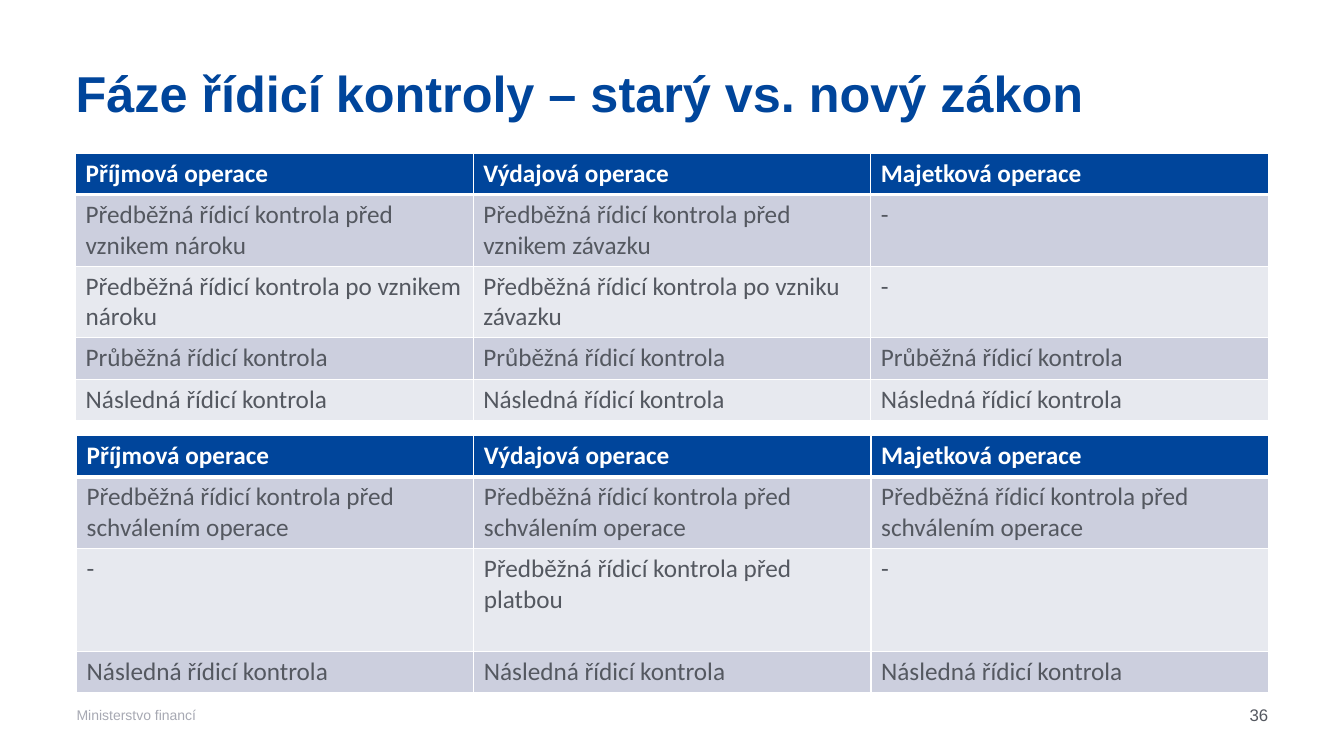
from lxml.etree import SubElement
from pptx import Presentation
from pptx.dml.color import RGBColor
from pptx.enum.text import MSO_ANCHOR as ANCHOR, MSO_AUTO_SIZE as AUTO_SIZE, PP_ALIGN as ALIGN
from pptx.oxml.ns import qn
from pptx.util import Inches, Pt

BLUE, GREY, PALE_GREY, WHITE = "00459B", "545860", "A7A9B3", "FFFFFF"
BANDS = ("CCCFDE", "E7E9EF")
LEFT, WIDTH = 0.75, 11.83
ONE_LINE, TWO_LINES, THREE_LINES = 0.41, 0.71, 1.02

HEADINGS = ["Příjmová operace", "Výdajová operace", "Majetková operace"]
PRIOR = "Předběžná řídicí kontrola "
ONGOING = ["Průběžná řídicí kontrola"] * 3
FOLLOW_UP = ["Následná řídicí kontrola"] * 3
OLD_LAW = [
    (ONE_LINE, HEADINGS),
    (TWO_LINES, [PRIOR + "před vznikem nároku", PRIOR + "před vznikem závazku", "-"]),
    (TWO_LINES, [PRIOR + "po vznikem nároku", PRIOR + "po vzniku závazku", "-"]),
    (ONE_LINE, ONGOING),
    (ONE_LINE, FOLLOW_UP),
]
NEW_LAW = [
    (ONE_LINE, HEADINGS),
    (TWO_LINES, [PRIOR + "před schválením operace"] * 3),
    (THREE_LINES, ["-", PRIOR + "před platbou", "-"]),
    (ONE_LINE, FOLLOW_UP),
]


def rgb(color):
    return RGBColor.from_string(color)


def set_font(font, color, **formats):
    font.color.rgb = rgb(color)
    for name, value in formats.items():
        setattr(font, name, value)


def fill_text(sp, box, text, color, size, bold=False, anchor=ANCHOR.MIDDLE,
              align=ALIGN.LEFT, spacing=1.0):
    """Place a text shape in its box, without insets, and write one line in it."""
    sp.left, sp.top, sp.width, sp.height = map(Inches, box)
    tf = sp.text_frame
    frame = dict(word_wrap=True, auto_size=AUTO_SIZE.NONE, vertical_anchor=anchor,
                 margin_left=0, margin_right=0, margin_top=0, margin_bottom=0)
    for name, value in frame.items():
        setattr(tf, name, value)
    p = tf.paragraphs[0]
    p.alignment, p.line_spacing = align, spacing
    r = p.add_run()
    r.text = text
    set_font(r.font, color, name="Arial", size=Pt(size), bold=bold)


def set_borders(cell, top, bottom):
    """Draw white cell borders; top and bottom widths are in points."""
    tc_pr = cell._tc.get_or_add_tcPr()
    for side, width in dict(lnL=1, lnR=1, lnT=top, lnB=bottom).items():
        line = SubElement(tc_pr, qn(f"a:{side}"), w=str(Pt(width)))
        fill = SubElement(line, qn("a:solidFill"))
        SubElement(fill, qn("a:srgbClr"), val=WHITE)


def add_phases(slide, left, top, width, rows):
    """Add a table of control phases, its rows given as (height, texts)."""
    columns = len(HEADINGS)
    height = sum(row_height for row_height, _ in rows)
    table = slide.shapes.add_table(len(rows), columns, *map(Inches, (left, top, width, height))).table
    for column in table.columns:
        column.width = Inches(width / columns)
    for i, (row_height, texts) in enumerate(rows):
        table.rows[i].height = Inches(row_height)
        header = i == 0
        for cell, text in zip(table.rows[i].cells, texts):
            set_borders(cell, top=3 if i == 1 else 1, bottom=3 if header else 1)
            cell.fill.solid()
            cell.fill.fore_color.rgb = rgb(BLUE if header else BANDS[(i - 1) % 2])
            r = cell.text_frame.paragraphs[0].add_run()
            r.text = text
            set_font(r.font, WHITE if header else GREY, name="Calibri", size=Pt(18), bold=header)


def add_footer(slide, left, top, width, height):
    number_width = 3
    parts = [
        (left, 4.32, "Ministerstvo financí", PALE_GREY, 10, ALIGN.LEFT),
        (left + width - number_width, number_width, "36", GREY, 12, ALIGN.RIGHT),
    ]
    for x, part_width, text, color, size, align in parts:
        sp = slide.shapes.add_textbox(0, 0, 0, 0)
        fill_text(sp, (x, top, part_width, height), text, color, size, align=align)


def main():
    prs = Presentation()
    prs.slide_width, prs.slide_height = Inches(13.33), Inches(7.5)
    slide = prs.slides.add_slide(prs.slide_layouts[5])
    fill_text(slide.shapes.title, (LEFT, 0.68, 10.83, 1.17),
              "Fáze řídicí kontroly – starý vs. nový zákon",
              BLUE, 36, bold=True, anchor=ANCHOR.TOP, spacing=0.9)
    add_phases(slide, LEFT, 1.52, WIDTH, OLD_LAW)
    add_phases(slide, LEFT + 0.01, 4.32, WIDTH - 0.01, NEW_LAW)
    add_footer(slide, LEFT + 0.01, 6.89, WIDTH - 0.01, 0.4)
    prs.save("out.pptx")


if __name__ == "__main__":
    main()
